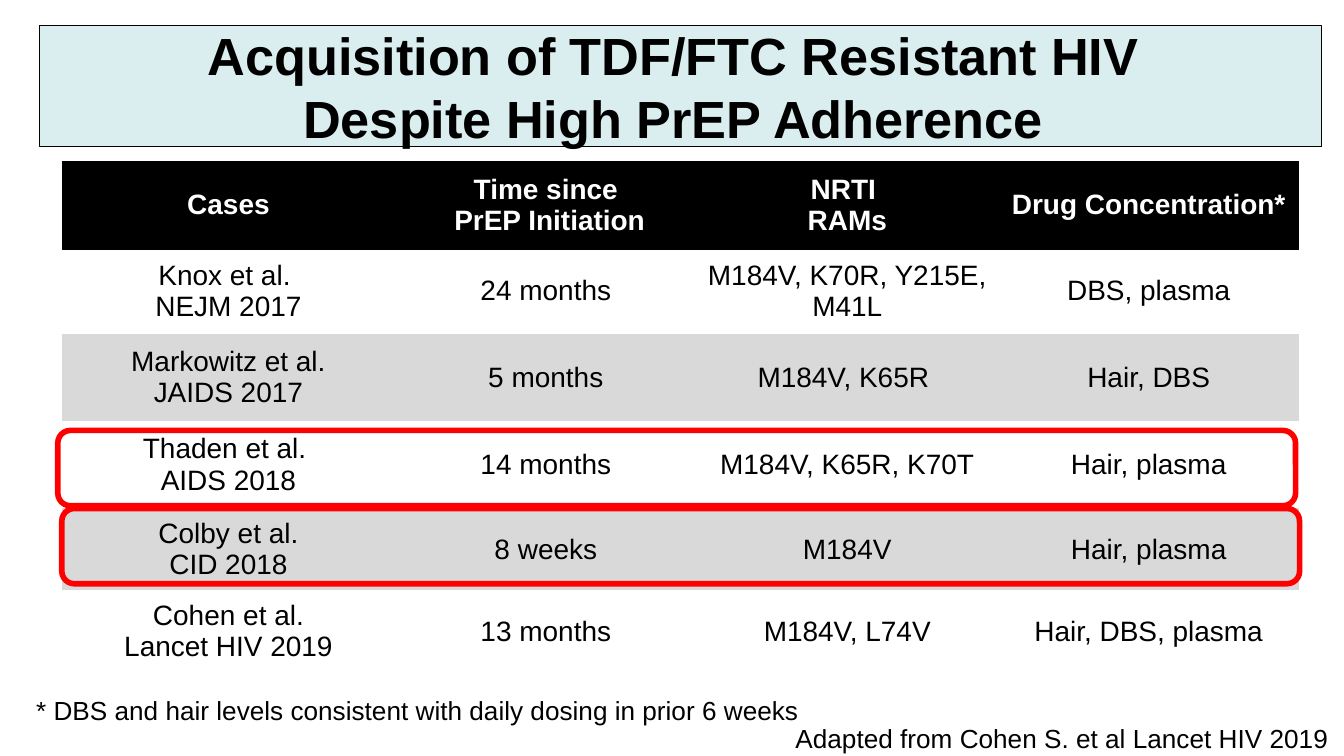
from lxml import etree
from pptx import Presentation
from pptx import util as u
from pptx.dml.color import RGBColor
from pptx.enum import shapes, text
from pptx.oxml import ns

WIDTH = u.Inches(10)
HEIGHT = WIDTH * 9 // 16
FONT = "Arial"
PLAIN_TABLE = "{2D5ABB26-0587-4C30-8999-92F81FD0307C}"
COLORS = {
    "ink": "000000",
    "paper": "FFFFFF",
    "title": "DAEDEF",
    "band": "D9D9D9",
    "ring": "FF0000",
}
COLUMN_SHARES = [24.8, 22.43, 22.43, 22.43]
ROW_SHARES = [11.57, 11.21, 11.57, 11.57, 10.85, 10.85]
ROW_FILLS = ["ink", "paper", "band", "paper", "band", None]
CASES = [
    ["Cases", "Time since\n PrEP Initiation", "NRTI \nRAMs", "Drug Concentration*"],
    ["Knox et al. \nNEJM 2017", "24 months", "M184V, K70R, Y215E, M41L", "DBS, plasma"],
    ["Markowitz et al.\nJAIDS 2017", "5 months", "M184V, K65R ", "Hair, DBS"],
    ["Thaden et al. \nAIDS 2018", "14 months", "M184V, K65R, K70T", "Hair, plasma"],
    ["Colby et al.\nCID 2018", "8 weeks", "M184V", "Hair, plasma"],
    ["Cohen et al.\nLancet HIV 2019", "13 months", "M184V, L74V", "Hair, DBS, plasma"],
]


def color(name):
    return RGBColor.from_string(COLORS[name])


def across(share):
    return int(WIDTH * share / 100)


def down(share):
    return int(HEIGHT * share / 100)


def place(left, top, width, height):
    return across(left), down(top), across(width), down(height)


def write(frame, words, size, ink="ink", bold=False, align=None):
    frame.text = words
    for para in frame.paragraphs:
        para.alignment = align
        for span in para.runs:
            span.font.name = FONT
            span.font.size = u.Pt(size)
            span.font.bold = bold
            span.font.color.rgb = color(ink)


def add_box(page, kind, area, line, weight, fill=None):
    box = page.shapes.add_shape(kind, *place(*area))
    box.shadow.inherit = False
    box.line.color.rgb = color(line)
    box.line.width = u.Pt(weight)
    if fill:
        box.fill.solid()
        box.fill.fore_color.rgb = color(fill)
    else:
        box.fill.background()
    return box


def add_title(page, words):
    box = add_box(page, shapes.MSO_SHAPE.RECTANGLE, (2.92, 3.38, 95.4, 16), "ink", 0.75, "title")
    frame = box.text_frame
    frame.vertical_anchor = text.MSO_ANCHOR.MIDDLE
    write(frame, words, 28, bold=True, align=text.PP_ALIGN.CENTER)


def add_note(page, words, area):
    frame = page.shapes.add_textbox(*place(*area)).text_frame
    frame.word_wrap = False
    frame.auto_size = text.MSO_AUTO_SIZE.SHAPE_TO_FIT_TEXT
    write(frame, words, 14)


def add_border(cell, side):
    line = etree.SubElement(cell._tc.get_or_add_tcPr(), ns.qn(f"a:{side}"), w=str(u.Pt(1)))
    fill = etree.SubElement(line, ns.qn("a:solidFill"))
    etree.SubElement(fill, ns.qn("a:srgbClr"), val=COLORS["ink"])


def fill_cell(cell, words, fill, header):
    cell.margin_left = cell.margin_right = u.Inches(0.01)
    cell.margin_top = cell.margin_bottom = u.Inches(0.01)
    cell.vertical_anchor = text.MSO_ANCHOR.MIDDLE
    if header:
        add_border(cell, "lnT")
        add_border(cell, "lnB")
    if fill:
        cell.fill.solid()
        cell.fill.fore_color.rgb = color(fill)
    else:
        cell.fill.background()
    ink = "paper" if header else "ink"
    write(cell.text_frame, words, 15, ink, header, text.PP_ALIGN.CENTER)


def add_case_table(page):
    area = place(4.6, 21.35, sum(COLUMN_SHARES), sum(ROW_SHARES))
    table = page.shapes.add_table(len(CASES), len(COLUMN_SHARES), *area).table
    table.horz_banding = False
    table._tbl.tblPr.find(ns.qn("a:tableStyleId")).text = PLAIN_TABLE
    for column, share in zip(table.columns, COLUMN_SHARES):
        column.width = across(share)
    for index, (row, share) in enumerate(zip(table.rows, ROW_SHARES)):
        row.height = down(share)
        for cell, words in zip(row.cells, CASES[index]):
            fill_cell(cell, words, ROW_FILLS[index], index == 0)


def main():
    deck = Presentation()
    deck.slide_width, deck.slide_height = WIDTH, HEIGHT
    page = deck.slides.add_slide(deck.slide_layouts[6])
    add_title(page, "Acquisition of TDF/FTC Resistant HIV \nDespite High PrEP Adherence ")
    add_note(page, "Adapted from Cohen S. et al Lancet HIV 2019", (58.2, 94.66, 41.8, 6.05))
    add_case_table(page)
    add_note(
        page,
        "* DBS and hair levels consistent with daily dosing in prior 6 weeks",
        (1.7, 90.93, 59.1, 6.05),
    )
    for left, top in [(4.6, 67.26), (4.3, 56.94)]:
        add_box(page, shapes.MSO_SHAPE.ROUNDED_RECTANGLE, (left, top, 92.1, 9.96), "ring", 3)
    deck.save("out.pptx")


if __name__ == "__main__":
    main()
